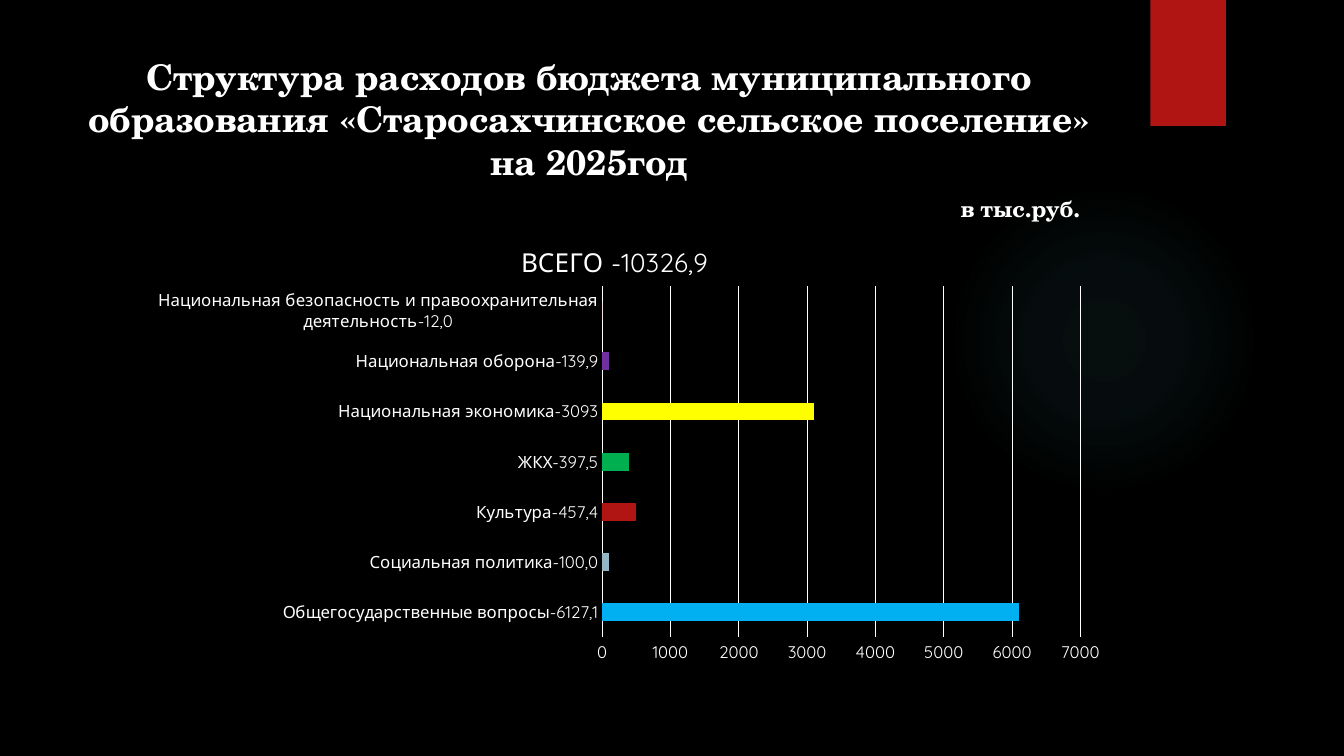
import pptx
import pptx.util
import pptx.dml.color
import pptx.chart.data
import pptx.enum.chart
import pptx.enum.shapes
import pptx.enum.text
import pptx.oxml
import pptx.oxml.ns

Inches, Pt = pptx.util.Inches, pptx.util.Pt
Align = pptx.enum.text.PP_ALIGN
Kind = pptx.enum.shapes.MSO_SHAPE
Tick = pptx.enum.chart.XL_TICK_MARK
WHITE, RED = "FFFFFF", "B01513"


def paint(fill, color):
    fill.solid()
    fill.fore_color.rgb = pptx.dml.color.RGBColor.from_string(color)


def style(font, size, name, bold=False):
    font.size, font.name, font.bold = Pt(size), name, bold
    paint(font.fill, WHITE)


deck = pptx.Presentation()
deck.slide_width, deck.slide_height = Inches(13.33), Inches(7.5)
slide = deck.slides.add_slide(deck.slide_layouts[6])
paint(slide.background.fill, "000000")

# Soft glow
glow = slide.shapes.add_shape(
    Kind.OVAL, Inches(9.41), Inches(1.83), Inches(3.08), Inches(3.08))
glow.shadow.inherit = False
glow.line.fill.background()
stops = "".join(
    f'<a:gs pos="{pos}000"><a:srgbClr val="50B9C1"><a:alpha val="{alpha}000"/></a:srgbClr></a:gs>'
    for pos, alpha in [(0, 7), (36, 6), (69, 0), (100, 0)])
grad = pptx.oxml.parse_xml(
    f'<a:gradFill {pptx.oxml.ns.nsdecls("a")} rotWithShape="1"><a:gsLst>{stops}</a:gsLst>'
    '<a:path path="circle"><a:fillToRect l="50000" t="50000" r="50000" b="50000"/></a:path>'
    '</a:gradFill>')
glow.element.spPr.find(pptx.oxml.ns.qn("a:prstGeom")).addnext(grad)

# Red tab
tab = slide.shapes.add_shape(
    Kind.RECTANGLE, Inches(11.41), 0, Inches(0.75), Inches(1.25))
tab.shadow.inherit = False
tab.line.fill.background()
paint(tab.fill, RED)

# Heading and unit
texts = [
    ("Структура расходов бюджета муниципального образования "
     "«Старосахчинское сельское поселение» на 2025год",
     0.7, 0.5, 10.29, 1.4, 25.2, Align.CENTER),
    ("в тыс.руб.", 8.81, 1.88, 2, 0.37, 16.2, Align.RIGHT),
]
for text, left, top, width, height, size, align in texts:
    box = slide.shapes.add_textbox(
        Inches(left), Inches(top), Inches(width), Inches(height))
    box.text_frame.word_wrap = True
    para = box.text_frame.paragraphs[0]
    para.text, para.alignment = text, align
    style(para.font, size, "TeX Gyre Schola", True)

# Spending chart: label, value, bar colour
items = [
    ("Общегосударственные вопросы-6127,1", 6100, "00B0F0"),
    ("Социальная политика-100,0", 100, "95B6C5"),
    ("Культура-457,4", 500, RED),
    ("ЖКХ-397,5", 400, "00B050"),
    ("Национальная экономика-3093", 3100, "FFFF00"),
    ("Национальная оборона-139,9", 100, "7030A0"),
    ("Национальная безопасность и правоохранительная деятельность-12,0", 0, RED),
]
data = pptx.chart.data.CategoryChartData()
data.categories = [label for label, _, _ in items]
data.add_series("Series 1", [value for _, value, _ in items])
chart = slide.shapes.add_chart(
    pptx.enum.chart.XL_CHART_TYPE.BAR_CLUSTERED,
    Inches(1.21), Inches(2.24), Inches(9.78), Inches(4.59), data).chart
chart.has_legend = False
style(chart.font, 10, "Quicksand")

# Bars
plot = chart.plots[0]
plot.gap_width, plot.vary_by_categories = 182, False
bars = plot.series[0]
paint(bars.format.fill, RED)
for index, (_, _, color) in enumerate(items):
    paint(bars.points[index].format.fill, color)

# Axes
cats, vals = chart.category_axis, chart.value_axis
for axis in (cats, vals):
    axis.major_tick_mark = axis.minor_tick_mark = Tick.NONE
    style(axis.tick_labels.font, 12, "Quicksand")
vals.minimum_scale, vals.maximum_scale, vals.major_unit = 0, 7000, 1000
vals.format.line.fill.background()
for line in (cats.format.line, vals.major_gridlines.format.line):
    line.width = Pt(0.75)
    paint(line.fill, WHITE)

# Chart title
chart.has_title = True
title = chart.chart_title
title.include_in_layout = False
head = title.text_frame.paragraphs[0]
head.text = "ВСЕГО -10326,9"
style(head.font, 18.6, "Quicksand")

# Fixed places of the plot and the title
area = chart.element.chart.plotArea
places = [
    (area, 0, '<c:layoutTarget val="inner"/>',
     {"x": 0.487, "y": 0.13, "w": 0.485, "h": 0.76}),
    (title.element, 1, "", {"x": 0.4, "y": 0.027}),
]
for part, order, target, spot in places:
    modes = "".join(f'<c:{key}Mode val="edge"/>' for key in "xy")
    sizes = "".join(f'<c:{key} val="{num}"/>' for key, num in spot.items())
    layout = pptx.oxml.parse_xml(
        f'<c:layout {pptx.oxml.ns.nsdecls("c")}><c:manualLayout>'
        f'{target}{modes}{sizes}</c:manualLayout></c:layout>')
    for old in part.findall(pptx.oxml.ns.qn("c:layout")):
        part.remove(old)
    part.insert(order, layout)

deck.save("out.pptx")
